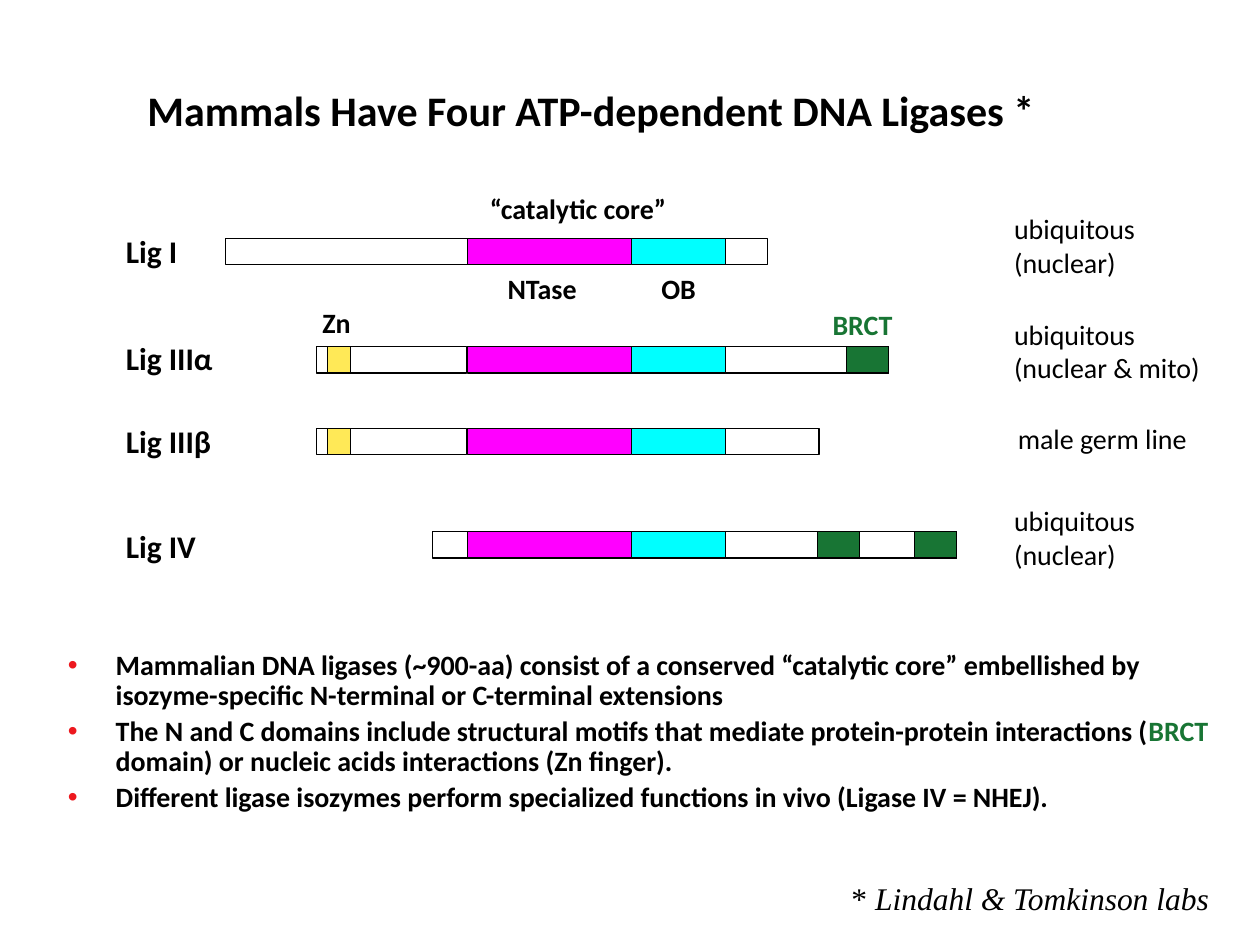
from lxml.etree import SubElement as Sub
from pptx import Presentation
from pptx.dml.color import RGBColor as Rgb
from pptx.enum.shapes import MSO_SHAPE as Kind
from pptx.enum.text import MSO_ANCHOR as Anchor, MSO_AUTO_SIZE as Fit, PP_ALIGN as Align
from pptx.oxml.ns import qn
from pptx.util import Inches, Pt

BLACK, GREEN, RED = "000000", "187534", "ED181E"
PINK, CYAN, GOLD = "FF00FF", "00FFFF", "FFE957"


def paint(spot, hue):
    if hasattr(spot, "solid"):
        spot.solid()
        spot.fore_color.rgb = Rgb.from_string(hue)
    else:
        spot.rgb = Rgb.from_string(hue)


def write(par, text, size=16, bold=False, slant=False, hue=BLACK, face="Calibri"):
    run = par.add_run()
    run.text = text
    font = run.font
    font.name, font.size, font.bold, font.italic = face, Pt(size), bold, slant
    paint(font.color, hue)


deck = Presentation()
deck.slide_width, deck.slide_height = Inches(10), Inches(7.5)
slide = deck.slides.add_slide(deck.slide_layouts[5])
shapes = slide.shapes

title = shapes.title
title.left, title.top = Inches(1.07), Inches(0.62)
title.width, title.height = Inches(7.74), Inches(0.5)
frame = title.text_frame
frame.word_wrap, frame.auto_size = False, Fit.SHAPE_TO_FIT_TEXT
frame.vertical_anchor = Anchor.TOP
frame.paragraphs[0].alignment = Align.LEFT
write(frame.paragraphs[0], "Mammals Have Four ATP-dependent DNA Ligases *", size=24, bold=True)

core = [(3.71, 1.31, PINK), (5.01, 0.75, CYAN)]
zinc = (2.6, 0.18, GOLD)
rows = [
    (1.89, [(1.79, 1.92, None), (5.76, 0.33, None)]),
    (2.75, [(2.51, 1.19, None), (5.76, 1.29, None), zinc, (6.72, 0.33, GREEN)]),
    (3.4, [(2.51, 1.19, None), (5.76, 0.74, None), zinc]),
    (4.22, [(3.43, 0.28, None), (5.76, 1.83, None), (6.49, 0.33, GREEN), (7.26, 0.33, GREEN)]),
]
for top, parts in rows:
    for left, width, hue in core + parts:
        bar = shapes.add_shape(Kind.RECTANGLE, Inches(left), Inches(top), Inches(width), Inches(0.21))
        bar.shadow.inherit = False
        if hue:
            paint(bar.fill, hue)
        else:
            bar.fill.background()
        paint(bar.line.fill, BLACK)
        bar.line.width = Pt(0.75)

name = {"size": 18, "bold": True}
bold = {"bold": True}
notes = [
    (0.9, 1.85, 0.67, 0.58, ["Lig I"], name),
    (0.9, 2.7, 1, 0.58, ["Lig IIIα"], name),
    (0.9, 3.36, 0.98, 0.58, ["Lig IIIβ"], name),
    (0.9, 4.19, 0.84, 0.58, ["Lig IV"], name),
    (7.95, 1.63, 1.22, 0.64, ["ubiquitous", "(nuclear)"], {}),
    (7.95, 2.47, 1.76, 0.64, ["ubiquitous", "(nuclear & mito)"], {}),
    (7.98, 3.3, 1.63, 0.37, ["male germ line"], {}),
    (7.95, 3.95, 1.22, 0.64, ["ubiquitous", "(nuclear)"], {}),
    (3.79, 1.47, 1.74, 0.37, ["“catalytic core”"], bold),
    (3.93, 2.11, 0.81, 0.37, ["NTase"], bold),
    (5.15, 2.11, 0.52, 0.37, ["OB"], bold),
    (2.46, 2.38, 0.46, 0.37, ["Zn"], bold),
    (6.51, 2.39, 0.74, 0.37, ["BRCT"], {"bold": True, "hue": GREEN}),
]
for left, top, width, height, lines, look in notes:
    box = shapes.add_textbox(Inches(left), Inches(top), Inches(width), Inches(height))
    frame = box.text_frame
    frame.word_wrap, frame.auto_size = False, Fit.SHAPE_TO_FIT_TEXT
    for i, line in enumerate(lines):
        par = frame.add_paragraph() if i else frame.paragraphs[0]
        if look is name:
            par.line_spacing = 0.8
        write(par, line, **look)

points = [
    [("Mammalian DNA ligases (~900-aa) consist of a conserved “catalytic core” embellished by "
      "isozyme-specific N-terminal or C-terminal extensions", BLACK)],
    [("The N and C domains include structural motifs that mediate protein-protein interactions (", BLACK),
     ("BRCT", GREEN),
     (" domain) or nucleic acids interactions (Zn finger).", BLACK)],
    [("Different ligase isozymes perform specialized functions in vivo (Ligase IV = NHEJ).", BLACK)],
]
box = shapes.add_textbox(Inches(0.44), Inches(5.12), Inches(9.25), Inches(1.99))
frame = box.text_frame
frame.word_wrap = True
for i, point in enumerate(points):
    par = frame.add_paragraph() if i else frame.paragraphs[0]
    par.line_spacing = 0.9
    if i:
        par.space_before = Pt(3.2)
    props = par._p.get_or_add_pPr()
    props.set("marL", str(Inches(0.38)))
    props.set("indent", str(-Inches(0.38)))
    Sub(Sub(props, qn("a:buClr")), qn("a:srgbClr"), val=RED)
    Sub(props, qn("a:buFont"), typeface="Arial")
    Sub(props, qn("a:buChar"), char="•")
    for text, hue in point:
        write(par, text, bold=True, hue=hue)

box = shapes.add_textbox(Inches(6.66), Inches(6.93), Inches(3.06), Inches(0.4))
frame = box.text_frame
frame.word_wrap, frame.auto_size = False, Fit.SHAPE_TO_FIT_TEXT
for text, slant in [("* ", False), ("Lindahl & Tomkinson labs", True)]:
    write(frame.paragraphs[0], text, size=18, slant=slant, face="Times New Roman")

deck.save("out.pptx")
